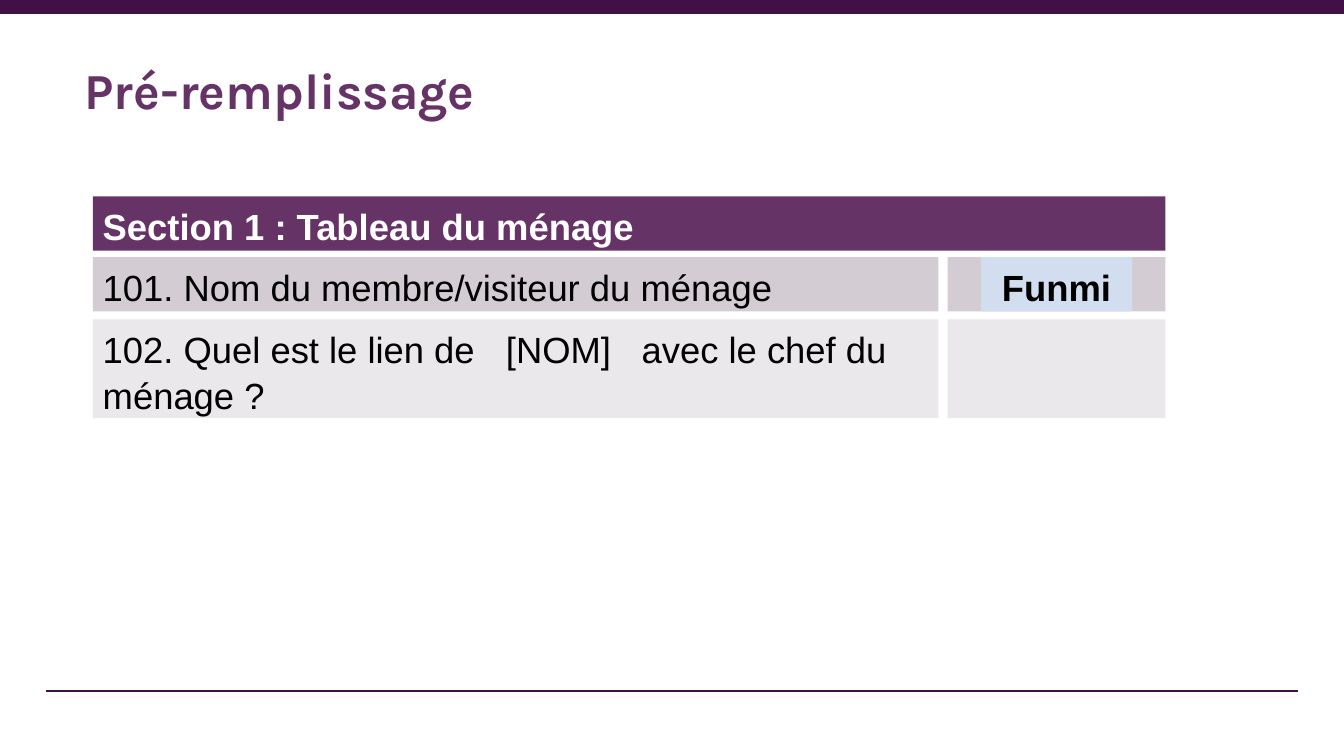
from lxml.etree import SubElement
from pptx import Presentation
from pptx.dml.color import RGBColor
from pptx.enum.shapes import MSO_CONNECTOR, MSO_SHAPE
from pptx.enum.text import MSO_ANCHOR, MSO_AUTO_SIZE, PP_ALIGN
from pptx.oxml.ns import qn
from pptx.util import Cm, Pt

WHITE = RGBColor(0xFF, 0xFF, 0xFF)
BLACK = RGBColor(0x00, 0x00, 0x00)
DARK_PURPLE = RGBColor(0x41, 0x10, 0x44)
PURPLE = RGBColor(0x66, 0x33, 0x66)
MAUVE = RGBColor(0xD3, 0xCD, 0xD3)
PALE_MAUVE = RGBColor(0xEA, 0xE8, 0xEA)
PALE_BLUE = RGBColor(0xD2, 0xDE, 0xEF)

PAGE_WIDTH, PAGE_HEIGHT = 33.87, 19.05


def add_span(para, text, font="Arial", size=26, color=BLACK, bold=False):
    span = para.add_run()
    span.text = text
    span.font.name = font
    span.font.size = Pt(size)
    span.font.color.rgb = color
    span.font.bold = bold
    return span


def add_rule(page, left, right, height, weight):
    """Draw a level line at the given height, in centimetres."""
    rule = page.shapes.add_connector(
        MSO_CONNECTOR.STRAIGHT, Cm(left), Cm(height), Cm(right), Cm(height))
    rule.line.color.rgb = DARK_PURPLE
    rule.line.width = Pt(weight)
    SubElement(rule._element.spPr, qn("a:effectLst"))


def add_title(page, left, top, width, height, text):
    title = page.shapes.title
    title.left, title.top, title.width, title.height = map(Cm, (left, top, width, height))
    frame = title.text_frame
    frame.auto_size = MSO_AUTO_SIZE.NONE
    frame.vertical_anchor = MSO_ANCHOR.TOP
    para = frame.paragraphs[0]
    para.alignment = PP_ALIGN.LEFT
    add_span(para, text, "Karla", 36, PURPLE, True)


def add_panel(page, left, top, width, height, fill, align=PP_ALIGN.LEFT):
    """Draw a filled box and return its empty paragraph."""
    box = page.shapes.add_shape(
        MSO_SHAPE.RECTANGLE, Cm(left), Cm(top), Cm(width), Cm(height))
    box.shadow.inherit = False
    box.fill.solid()
    box.fill.fore_color.rgb = fill
    box.line.fill.background()
    frame = box.text_frame
    frame.word_wrap = True
    frame.vertical_anchor = MSO_ANCHOR.TOP
    para = frame.paragraphs[0]
    para.alignment = align
    para.line_spacing = 1.06
    return para


def add_question(para, parts):
    """Write the parts, set apart by spaces three times as wide as usual."""
    for index, part in enumerate(parts):
        if index:
            gap = add_span(para, " ")
            gap.font._element.set("spc", "1445")
        add_span(para, part)


def add_household_form(page, left, top, width):
    line_height, column_gap, answer_width, tag_width = 1.37, 0.23, 5.49, 3.81
    question_width = width - answer_width - column_gap
    answer_left = left + width - answer_width
    heading = add_panel(page, left, top, width, line_height, PURPLE)
    add_span(heading, "Section 1 : Tableau du ménage", color=WHITE, bold=True)

    rows = [
        (1.53, line_height, MAUVE, ["101. Nom du membre/visiteur du ménage"]),
        (3.1, 2.49, PALE_MAUVE,
         ["102. Quel est le lien de", "[NOM]", "avec le chef du ménage ?"]),
    ]
    for offset, height, fill, parts in rows:
        question = add_panel(page, left, top + offset, question_width, height, fill)
        add_question(question, parts)
        add_panel(page, answer_left, top + offset, answer_width, height, fill)

    tag_left = answer_left + (answer_width - tag_width) / 2
    tag = add_panel(page, tag_left, top + rows[0][0], tag_width, line_height,
                    PALE_BLUE, PP_ALIGN.CENTER)
    add_span(tag, "Funmi", bold=True)


def main():
    deck = Presentation()
    deck.slide_width, deck.slide_height = Cm(PAGE_WIDTH), Cm(PAGE_HEIGHT)
    page = deck.slides.add_slide(deck.slide_layouts[5])
    add_rule(page, 1.17, 32.72, 17.42, 1.25)
    add_rule(page, 0, PAGE_WIDTH, 0.18, 10.25)
    add_title(page, 1.88, 1.35, 30.07, 3.1, "Pré-remplissage")
    add_household_form(page, 2.34, 4.95, 27.03)
    deck.save("out.pptx")


if __name__ == "__main__":
    main()
